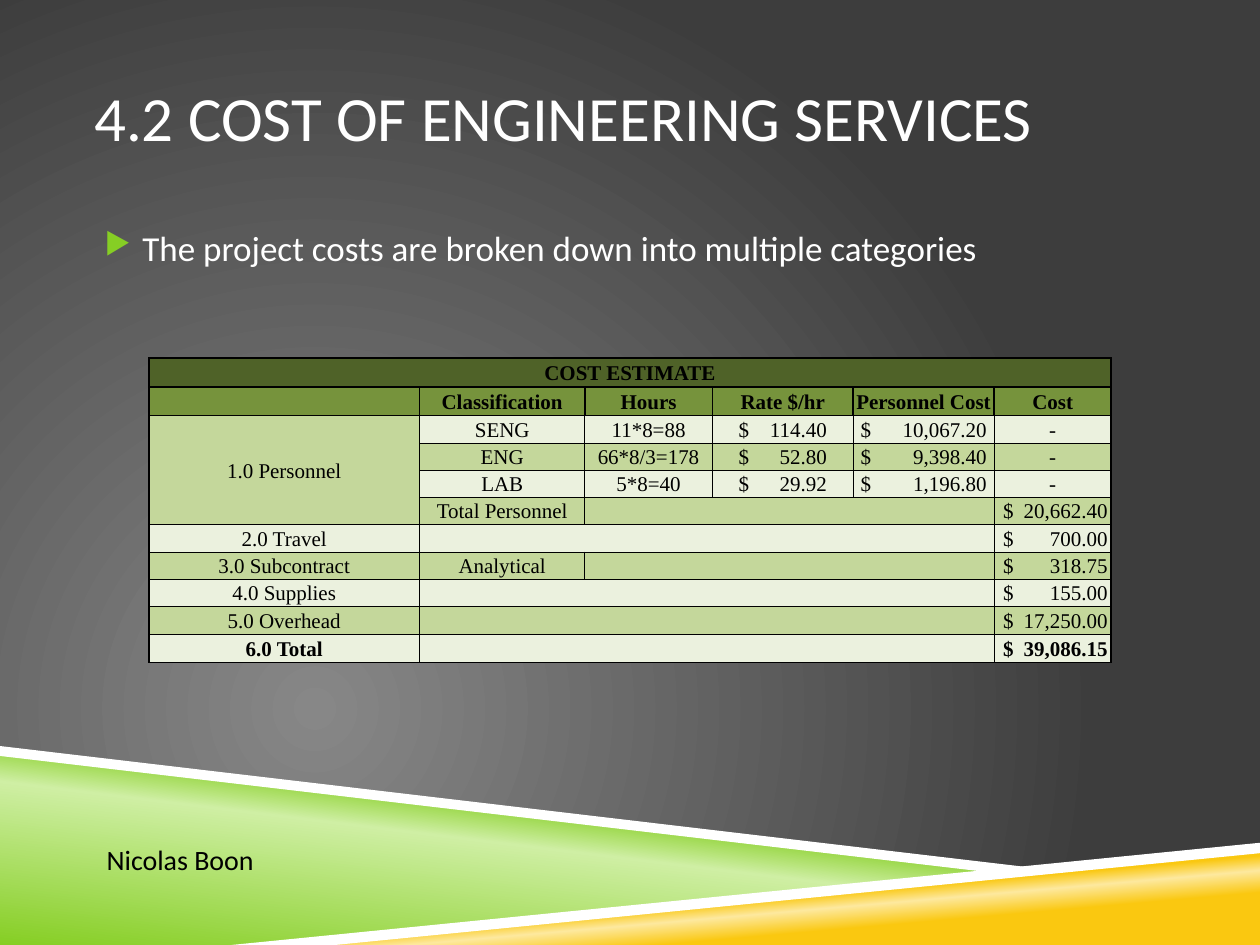
import pptx
import pptx.dml.color
import pptx.enum.text
import pptx.oxml.ns
import pptx.util
from lxml import etree

Cm = pptx.util.Cm
Pt = pptx.util.Pt
qn = pptx.oxml.ns.qn
ALIGN = pptx.enum.text.PP_ALIGN
ANCHOR = pptx.enum.text.MSO_ANCHOR

COLUMN_WIDTHS = [5.46, 3.33, 2.57, 2.84, 2.84, 2.36]
EDGE_ROW_HEIGHT, ROW_HEIGHT = 0.58, 0.55
COST_ROWS = [
    ["COST ESTIMATE", "", "", "", "", ""],
    ["", "Classification", "Hours", "Rate $/hr", "Personnel Cost", "Cost"],
    ["1.0 Personnel", "SENG", "11*8=88", "$\t114.40", "$\t10,067.20", "-"],
    ["", "ENG", "66*8/3=178", "$\t52.80", "$\t9,398.40", "-"],
    ["", "LAB", "5*8=40", "$\t29.92", "$\t1,196.80", "-"],
    ["", "Total Personnel", "", "", "", "$\t20,662.40"],
    ["2.0 Travel", "", "", "", "", "$\t700.00"],
    ["3.0 Subcontract", "Analytical", "", "", "", "$\t318.75"],
    ["4.0 Supplies", "", "", "", "", "$\t155.00"],
    ["5.0 Overhead", "", "", "", "", "$\t17,250.00"],
    ["6.0 Total", "", "", "", "", "$\t39,086.15"],
]
LAST_ROW, LAST_COLUMN = len(COST_ROWS) - 1, len(COLUMN_WIDTHS) - 1
BOLD_ROWS = (0, 1, LAST_ROW)
# First and last cell of each merged block, as (row, column)
MERGES = [((0, 0), (0, 5)), ((2, 0), (5, 0)), ((5, 2), (5, 4)), ((7, 2), (7, 4))]
MERGES += [((row, 1), (row, 4)) for row in (6, 8, 9, 10)]
# Money columns: left margin of the dollar sign, right tab of the amount
MONEY_COLUMNS = {3: (0.53, 1.78), 4: (0.15, 2.54), 5: (0.18, 2.11)}


def color(value):
    return pptx.dml.color.RGBColor.from_string(value)


def add_element(parent, tag, **attributes):
    element = etree.SubElement(parent, qn(tag))
    for name, value in attributes.items():
        element.set(name, str(value))
    return element


def set_gradient(fill, element, stops):
    """Fill with (percent, colour) stops and return the gradient element."""
    fill.gradient()
    gradient = element.find(".//" + qn("a:gradFill"))
    stop_list = gradient.find(qn("a:gsLst"))
    for stop in list(stop_list):
        stop_list.remove(stop)
    for percent, value in stops:
        stop = add_element(stop_list, "a:gs", pos=percent * 1000)
        add_element(stop, "a:srgbClr", val=value)
    return gradient


def set_background(slide):
    gradient = set_gradient(slide.background.fill, slide.element,
                            [(0, "878787"), (100, "3D3D3D")])
    linear = gradient.find(qn("a:lin"))
    if linear is not None:
        gradient.remove(linear)
    circle = add_element(gradient, "a:path", path="circle")
    add_element(circle, "a:fillToRect", l=50000, t=100000, r=100000, b=50000)


def add_outline(slide, points):
    corners = [(Cm(x), Cm(y)) for x, y in points]
    builder = slide.shapes.build_freeform(*corners[0])
    builder.add_line_segments(corners[1:], close=True)
    shape = builder.convert_to_shape()
    shape.shadow.inherit = False
    shape.line.fill.background()
    return shape


def add_gradient_band(slide, points, stops, angle):
    shape = add_outline(slide, points)
    set_gradient(shape.fill, shape.element, stops)
    shape.fill.gradient_angle = angle


def add_white_stripe(slide, points):
    shape = add_outline(slide, points)
    shape.fill.solid()
    shape.fill.fore_color.rgb = color("FFFFFF")


def add_run(paragraph, text, size, font="Calibri", value="FFFFFF", bold=False):
    run = paragraph.add_run()
    run.text = text
    run.font.size = Pt(size)
    run.font.name = font
    run.font.bold = bold
    run.font.color.rgb = color(value)


def add_text(slide, box, text, size, value="FFFFFF", side_inset=0.0,
             anchor=ANCHOR.TOP, bullet=False):
    shape = slide.shapes.add_textbox(*map(Cm, box))
    frame = shape.text_frame
    frame.word_wrap = True
    frame.vertical_anchor = anchor
    frame.margin_left = frame.margin_right = Cm(side_inset)
    paragraph = frame.paragraphs[0]
    if bullet:
        properties = paragraph._p.get_or_add_pPr()
        properties.set("marL", str(Cm(0.97)))
        properties.set("indent", str(Cm(-0.76)))
        bullet_color = add_element(properties, "a:buClr")
        add_element(bullet_color, "a:srgbClr", val="86CE24")
        add_element(properties, "a:buSzPct", val=85000)
        add_element(properties, "a:buChar", char="▶")
    add_run(paragraph, text, size, value=value)


def set_borders(cell, row, column):
    """Thick lines around the table and its two heading rows, thin elsewhere."""
    heading = row <= 1
    thick = {"a:lnL": heading or column == 0,
             "a:lnR": heading or column == LAST_COLUMN,
             "a:lnT": row <= 2,
             "a:lnB": heading or row == LAST_ROW}
    properties = cell._tc.get_or_add_tcPr()
    for tag, is_thick in thick.items():
        line = add_element(properties, tag, w=Pt(1 if is_thick else 0.5))
        add_element(add_element(line, "a:solidFill"), "a:srgbClr", val="000000")


def cell_fill(row, column):
    if row <= 1:
        return ("4F6228", "76933C")[row]
    in_personnel = column == 0 and row <= 5
    return "C4D79B" if row % 2 or in_personnel else "EBF1DE"


def fill_cell(cell, row, column, text):
    set_borders(cell, row, column)
    cell.fill.solid()
    cell.fill.fore_color.rgb = color(cell_fill(row, column))
    cell.vertical_anchor = ANCHOR.MIDDLE
    cell.margin_left = cell.margin_right = cell.margin_top = Cm(0.03)
    cell.margin_bottom = 0
    paragraph = cell.text_frame.paragraphs[0]
    paragraph.alignment = ALIGN.CENTER
    if "\t" in text:
        margin, tab = MONEY_COLUMNS[column]
        cell.margin_left = Cm(margin)
        paragraph.alignment = ALIGN.LEFT
        tabs = add_element(paragraph._p.get_or_add_pPr(), "a:tabLst")
        add_element(tabs, "a:tab", pos=Cm(tab), algn="r")
    if text:
        add_run(paragraph, text, 12, "Times New Roman", "000000", row in BOLD_ROWS)
    else:
        # Keeps empty cells from stretching the row
        add_element(paragraph._p, "a:endParaRPr", sz=1200)


def add_cost_table(slide):
    heights = [EDGE_ROW_HEIGHT if row in BOLD_ROWS else ROW_HEIGHT
               for row in range(len(COST_ROWS))]
    table = slide.shapes.add_table(
        len(COST_ROWS), len(COLUMN_WIDTHS), Cm(3), Cm(7.22),
        Cm(sum(COLUMN_WIDTHS)), Cm(sum(heights))).table
    table.first_row = table.horz_banding = False
    for column, width in zip(table.columns, COLUMN_WIDTHS):
        column.width = Cm(width)
    for row, height in zip(table.rows, heights):
        row.height = Cm(height)
    for row, texts in enumerate(COST_ROWS):
        for column, text in enumerate(texts):
            fill_cell(table.cell(row, column), row, column, text)
    for first, last in MERGES:
        table.cell(*first).merge(table.cell(*last))


def main():
    presentation = pptx.Presentation()
    presentation.slide_width, presentation.slide_height = Cm(25.4), Cm(19.05)
    slide = presentation.slides.add_slide(presentation.slide_layouts[6])
    set_background(slide)

    # Bands and stripes along the bottom
    add_gradient_band(slide, [(0, 15.16), (20.12, 17.58), (5.08, 19.05), (0, 19.05)],
                      [(0, "86CE24"), (52, "CFEFA4"), (66, "86CE24")], 83)
    add_gradient_band(slide, [(5.03, 19.05), (25.4, 17.07), (25.4, 19.05)],
                      [(28, "FAC810"), (40, "FDE99F"), (48, "FAC810")], 95)
    add_white_stripe(slide, [(0, 15.04), (0, 15.24), (20.07, 17.6), (21.13, 17.53)])
    add_white_stripe(slide, [(25.4, 16.99), (4.67, 19.05), (6.76, 19.05), (25.4, 17.2)])

    # Title, statement and author
    add_text(slide, (1.9, 0.76, 21.59, 3.18), "4.2 COST OF ENGINEERING SERVICES",
             36, anchor=ANCHOR.MIDDLE)
    add_text(slide, (1.9, 4.45, 21.59, 2.03),
             "The project costs are broken down into multiple categories",
             20, bullet=True)
    add_text(slide, (1.9, 16.87, 4.09, 0.94), "Nicolas Boon", 16,
             value="000000", side_inset=0.25)

    add_cost_table(slide)
    presentation.save("out.pptx")


if __name__ == "__main__":
    main()
